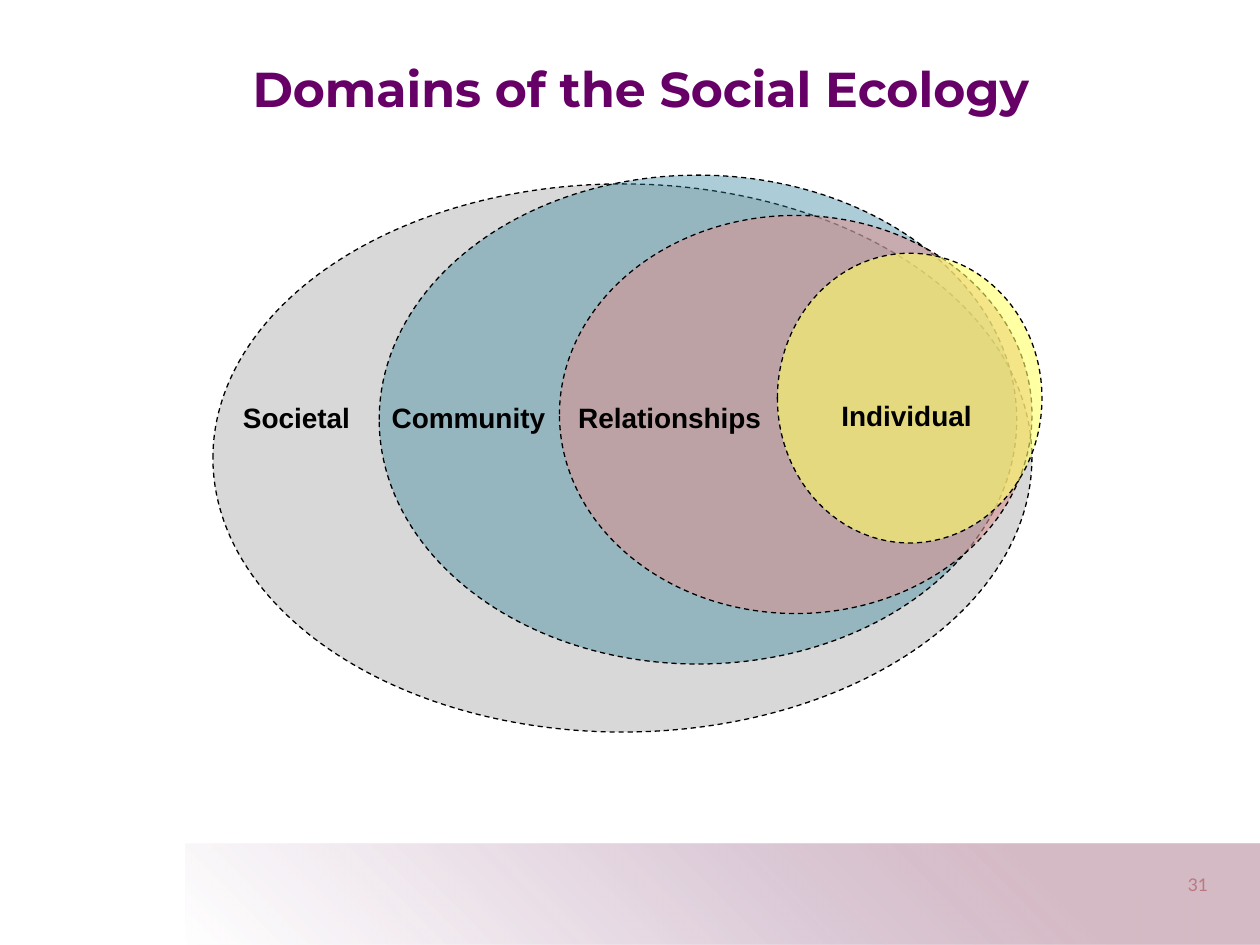
from dataclasses import dataclass

from lxml.etree import SubElement
from pptx import Presentation
from pptx.dml.color import RGBColor
from pptx.enum.dml import MSO_LINE_DASH_STYLE as Dash
from pptx.enum.shapes import MSO_SHAPE as Shape
from pptx.enum.text import MSO_ANCHOR as Anchor, PP_ALIGN as Align
from pptx.oxml import parse_xml
from pptx.oxml.ns import nsdecls, qn
from pptx.util import Inches, Pt

COLUMNS, ROWS = 100, 75
TITLE_ONLY = 5


@dataclass(frozen=True)
class Theme:
    title_color: str = "660066"
    text_color: str = "000000"
    number_color: str = "C0504D"
    outline: str = "000000"
    societal: str = "D8D8D8"
    community: str = "31849B"
    relationships: str = "D99594"
    individual: str = "FFFF66"
    # position, colour and opacity, all shares in percent
    band_stops: tuple = ((20, "BA8FA0", 61), (46, "CBB0C5", 66), (100, "FFFFFF", 61))
    title_font: str = "Montserrat"
    label_font: str = "Arial"
    number_font: str = "Lato"
    title_size: float = 28
    label_size: float = 16
    number_size: float = 10
    line_width: float = 0.75


def write_text(shape, text, *, font, size, color, bold=False,
               align=Align.LEFT, anchor=Anchor.TOP, wrap=True):
    frame = shape.text_frame
    frame.word_wrap = wrap
    frame.vertical_anchor = anchor
    paragraph = frame.paragraphs[0]
    paragraph.alignment = align
    run = paragraph.add_run()
    run.text = text
    run.font.name = font
    run.font.size = Pt(size)
    run.font.bold = bold
    run.font.color.rgb = RGBColor.from_string(color)


class SlideBuilder:
    """Draws on one slide; every box is (column, row, columns wide, rows high)."""

    def __init__(self, presentation, theme):
        self.theme = theme
        self.column = presentation.slide_width / COLUMNS
        self.row = presentation.slide_height / ROWS
        self.slide = presentation.slides.add_slide(presentation.slide_layouts[TITLE_ONLY])
        self.shapes = self.slide.shapes

    def place(self, box):
        left, top, width, height = box
        return (round(left * self.column), round(top * self.row),
                round(width * self.column), round(height * self.row))

    def title(self, text, box):
        title = self.slide.shapes.title
        title.left, title.top, title.width, title.height = self.place(box)
        write_text(title, text, font=self.theme.title_font, size=self.theme.title_size,
                   color=self.theme.title_color, bold=True,
                   align=Align.CENTER, anchor=Anchor.MIDDLE)

    def text(self, text, box, **style):
        write_text(self.shapes.add_textbox(*self.place(box)), text, **style)

    def page_number(self, number, box):
        self.text(number, box, font=self.theme.number_font, size=self.theme.number_size,
                  color=self.theme.number_color, wrap=False)

    def label(self, text, box):
        self.text(text, box, font=self.theme.label_font, size=self.theme.label_size,
                  color=self.theme.text_color, bold=True)

    def start_group(self):
        """Send the elements that follow into a new group."""
        self.shapes = self.slide.shapes.add_group_shape().shapes

    def band(self, box):
        """Rectangle whose gradient spreads from its top right corner."""
        band = self.shapes.add_shape(Shape.RECTANGLE, *self.place(box))
        band.shadow.inherit = False
        band.line.fill.background()
        stops = "".join(
            f'<a:gs pos="{position * 1000}"><a:srgbClr val="{color}">'
            f'<a:alpha val="{opacity * 1000}"/></a:srgbClr></a:gs>'
            for position, color, opacity in self.theme.band_stops)
        gradient = parse_xml(
            f'<a:gradFill {nsdecls("a")} rotWithShape="1"><a:gsLst>{stops}</a:gsLst>'
            '<a:path path="circle"><a:fillToRect l="100000" b="100000"/></a:path>'
            '</a:gradFill>')
        band.element.spPr.find(qn("a:prstGeom")).addnext(gradient)

    def ellipse(self, box, color, opacity):
        ellipse = self.shapes.add_shape(Shape.OVAL, *self.place(box))
        ellipse.shadow.inherit = False
        ellipse.fill.solid()
        ellipse.fill.fore_color.rgb = RGBColor.from_string(color)
        if opacity < 100:
            fill_color = ellipse.element.spPr.find(qn("a:solidFill"))[0]
            SubElement(fill_color, qn("a:alpha"), val=str(opacity * 1000))
        ellipse.line.color.rgb = RGBColor.from_string(self.theme.outline)
        ellipse.line.width = Pt(self.theme.line_width)
        ellipse.line.dash_style = Dash.DASH


def main():
    presentation = Presentation()
    presentation.slide_width, presentation.slide_height = Inches(10), Inches(7.5)
    theme = Theme()
    builder = SlideBuilder(presentation, theme)

    builder.page_number("31", (93.3, 68.9, 4.3, 2.7))
    builder.band((14.7, 67, 85.3, 8))
    builder.title("Domains of the Social Ecology", (5.3, 4.1, 91.1, 5.7))

    domains = (
        ("Societal", (16.9, 14.6, 65, 43.5), theme.societal, 100, (18.3, 31.3, 13.1, 6.4)),
        ("Community", (30.1, 13.9, 50.6, 38.8), theme.community, 40, (30.1, 31.3, 19.5, 5.3)),
        ("Relationships", (44.4, 17.1, 37.5, 31.6), theme.relationships, 60,
         (44.9, 31.3, 22.5, 10.3)),
        ("Individual", (61.7, 20.1, 21, 23), theme.individual, 60, (65.8, 31.1, 15.3, 6.8)),
    )
    builder.start_group()
    for _, ellipse_box, color, opacity, _ in domains:
        builder.ellipse(ellipse_box, color, opacity)
    for name, _, _, _, label_box in reversed(domains):
        builder.label(name, label_box)

    presentation.save("out.pptx")


if __name__ == "__main__":
    main()
